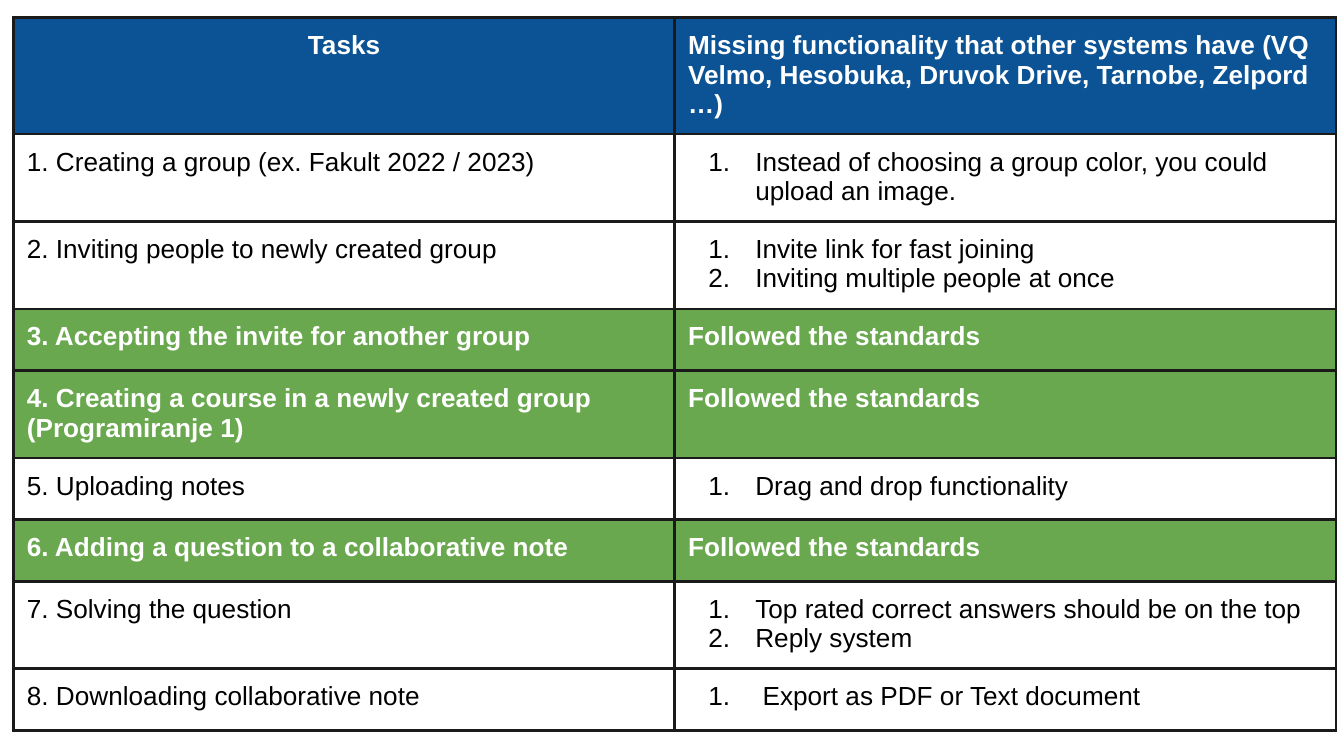
from dataclasses import dataclass

from pptx import Presentation
from pptx.dml.color import RGBColor
from pptx.enum.text import PP_ALIGN
from pptx.oxml import parse_xml
from pptx.oxml.ns import nsdecls
from pptx.table import _Cell
from pptx.util import Pt

COLORS = {
    "header": "0B5394",
    "standard": "6AA84F",
    "plain": "FFFFFF",
    "light_text": "FFFFFF",
    "dark_text": "000000",
    "border": "1A1A1A",
}
FONT, FONT_SIZE = "Arial", Pt(14)
LEFT, TOP, COL_WIDTH = Pt(7.2), Pt(9.4), Pt(354.25)
MARGIN = Pt(7.2)
LIST_INDENT, LIST_HANGING = Pt(36), Pt(25.2)
BORDER_WIDTH = Pt(1.5)
# Row height by number of text lines
ROW_HEIGHTS = {1: Pt(33.1), 2: Pt(46.8), 3: Pt(62.4)}


@dataclass
class TaskRow:
    task: str
    missing: tuple[str, ...] = ("Followed the standards",)
    lines: int = 1
    kind: str = "plain"


ROWS = [
    TaskRow(
        "Tasks",
        ("Missing functionality that other systems have (VQ Velmo, Hesobuka, "
         "Druvok Drive, Tarnobe, Zelpord …)",),
        3, "header",
    ),
    TaskRow(
        "1. Creating a group (ex. Fakult 2022 / 2023)",
        ("Instead of choosing a group color, you could upload an image.",), 2,
    ),
    TaskRow(
        "2. Inviting people to newly created group",
        ("Invite link for fast joining", "Inviting multiple people at once"), 2,
    ),
    TaskRow("3. Accepting the invite for another group", kind="standard"),
    TaskRow(
        "4. Creating a course in a newly created group (Programiranje 1)",
        lines=2, kind="standard",
    ),
    TaskRow("5. Uploading notes", ("Drag and drop functionality",)),
    TaskRow("6. Adding a question to a collaborative note", kind="standard"),
    TaskRow(
        "7. Solving the question",
        ("Top rated correct answers should be on the top", "Reply system"), 2,
    ),
    TaskRow("8. Downloading collaborative note", (" Export as PDF or Text document",)),
]


def add_borders(cell: _Cell) -> None:
    tc_pr = cell._tc.get_or_add_tcPr()
    # Cell lines must come before the fill, in this order
    for i, side in enumerate(("lnL", "lnR", "lnT", "lnB")):
        tc_pr.insert(i, parse_xml(
            f'<a:{side} {nsdecls("a")} w="{BORDER_WIDTH}"><a:solidFill>'
            f'<a:srgbClr val="{COLORS["border"]}"/></a:solidFill></a:{side}>'
        ))


def number_paragraph(p) -> None:
    """Give the paragraph a hanging indent and an automatic number."""
    p_pr = p._p.get_or_add_pPr()
    p_pr.set("marL", str(LIST_INDENT))
    p_pr.set("indent", str(-LIST_HANGING))
    bullet = (
        f'<a:buClr {nsdecls("a")}><a:srgbClr val="{COLORS["dark_text"]}"/></a:buClr>',
        f'<a:buFont {nsdecls("a")} typeface="{FONT}"/>',
        f'<a:buAutoNum {nsdecls("a")} type="arabicPeriod"/>',
    )
    for i, xml in enumerate(bullet):
        p_pr.insert(i, parse_xml(xml))


def fill_cell(cell: _Cell, texts: tuple[str, ...], kind: str, numbered: bool) -> None:
    plain = kind == "plain"
    cell.margin_left = cell.margin_right = MARGIN
    cell.margin_top = cell.margin_bottom = MARGIN
    cell.fill.solid()
    cell.fill.fore_color.rgb = RGBColor.from_string(COLORS[kind])
    add_borders(cell)
    tf = cell.text_frame
    for i, text in enumerate(texts):
        p = tf.add_paragraph() if i else tf.paragraphs[0]
        p.add_run().text = text
        p.font.name, p.font.size, p.font.bold = FONT, FONT_SIZE, not plain
        color = COLORS["dark_text" if plain else "light_text"]
        p.font.color.rgb = RGBColor.from_string(color)
        if numbered:
            number_paragraph(p)


def main() -> None:
    prs = Presentation()
    prs.slide_width, prs.slide_height = Pt(720), Pt(405)
    s = prs.slides.add_slide(prs.slide_layouts[6])

    heights = [ROW_HEIGHTS[row.lines] for row in ROWS]
    table = s.shapes.add_table(
        len(ROWS), 2, LEFT, TOP, 2 * COL_WIDTH, sum(heights)
    ).table
    table.first_row = table.horz_banding = False
    for col in table.columns:
        col.width = COL_WIDTH
    for i, (row, height) in enumerate(zip(ROWS, heights)):
        table.rows[i].height = height
        fill_cell(table.cell(i, 0), (row.task,), row.kind, False)
        fill_cell(table.cell(i, 1), row.missing, row.kind, row.kind == "plain")
    table.cell(0, 0).text_frame.paragraphs[0].alignment = PP_ALIGN.CENTER

    prs.save("out.pptx")


if __name__ == "__main__":
    main()
